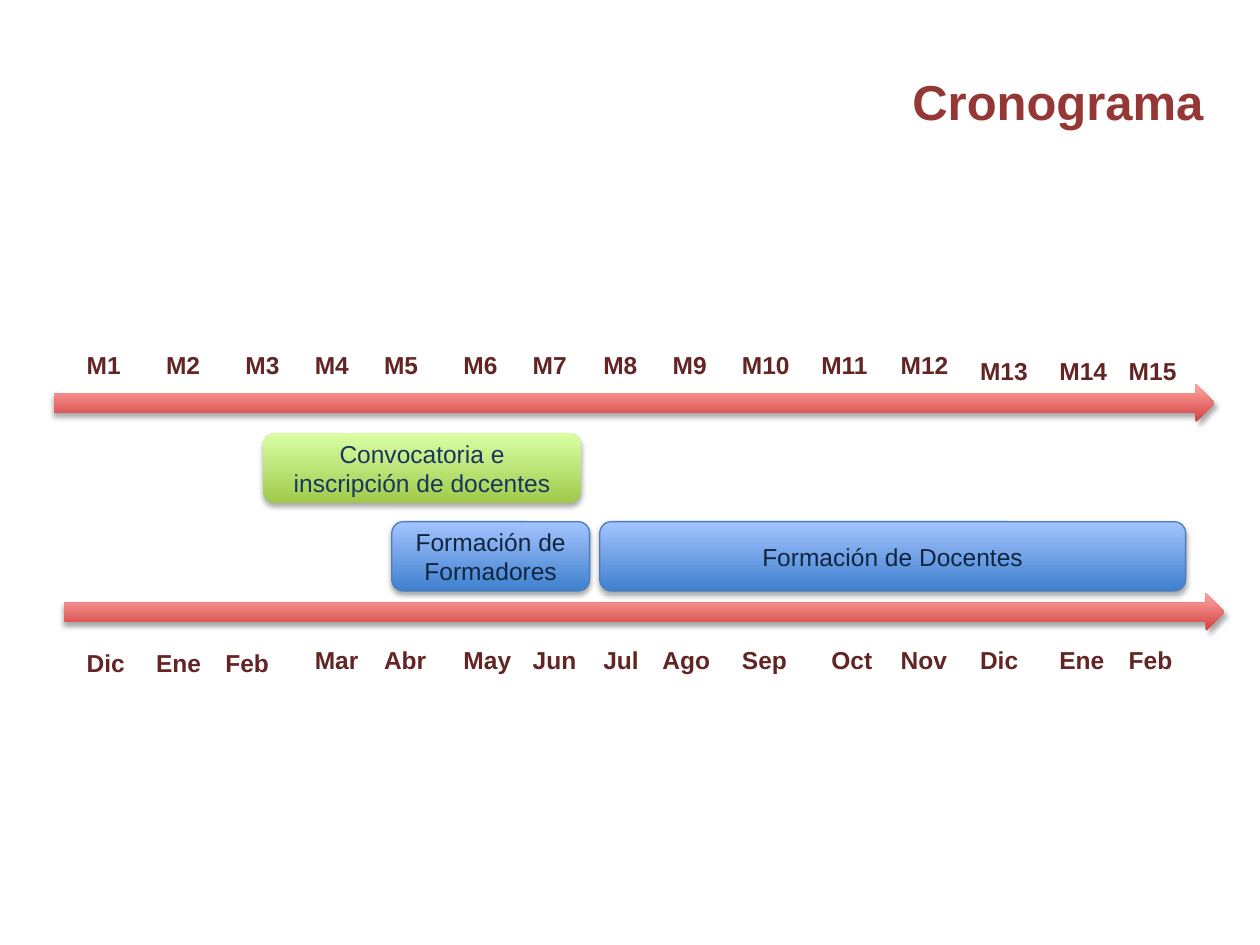
"""Build a one-slide project timeline with months, phases and two arrows."""
from lxml.etree import SubElement
from pptx import Presentation
from pptx.dml.color import RGBColor
from pptx.enum.shapes import MSO_SHAPE as Shape
from pptx.enum.text import MSO_ANCHOR as Anchor, MSO_AUTO_SIZE as AutoSize, PP_ALIGN as Align
from pptx.oxml.ns import qn
from pptx.util import Inches, Pt

COLORS = {
    "title": "953735", "label": "632523", "shadow": "000000",
    "red_dark": "D1403C", "red_light": "FFA6A5",
    "green_dark": "A0CA4A", "green_light": "DAFFA5", "green_text": "17375E",
    "blue_dark": "3F80CE", "blue_light": "A4C4FF", "blue_line": "4B7EBC", "blue_text": "10253F",
}
PROJECT_MONTHS = [
    (2.73, [0.59, 1.22, 1.85, 2.4, 2.95, 3.58, 4.13, 4.69, 5.24, 5.79, 6.42, 7.05]),
    (2.78, [7.68, 8.31, 8.86]),
]
CALENDAR_MONTHS = [
    (5.09, [("Dic", 0.59), ("Ene", 1.14), ("Feb", 1.69)]),
    (5.07, [("Mar", 2.4), ("Abr", 2.95), ("May", 3.58), ("Jun", 4.13),
            ("Jul", 4.69), ("Ago", 5.16), ("Sep", 5.79), ("Oct", 6.5),
            ("Nov", 7.05), ("Dic", 7.68), ("Ene", 8.31), ("Feb", 8.86)]),
]
PHASES = [
    ("Convocatoria e inscripción de docentes", 2.09, 3.44, 2.52, "green"),
    ("Formación de Formadores", 3.11, 4.14, 1.57, "blue"),
    ("Formación de Docentes", 4.76, 4.14, 4.65, "blue"),
]
ARROWS = [(0.43, 3.05), (0.51, 4.71)]


def color(name):
    return RGBColor.from_string(COLORS[name])


def write(frame, text, size, tint, bold=False, align=Align.LEFT):
    frame.word_wrap = True
    frame.text = text
    para = frame.paragraphs[0]
    para.alignment = align
    font = para.runs[0].font
    font.name, font.size, font.bold = "Arial", Pt(size), bold
    font.color.rgb = color(tint)


def add_title(page, text):
    title = page.shapes.title
    title.left, title.top = Inches(5.63), Inches(0.52)
    title.width, title.height = Inches(4.02), Inches(0.57)
    frame = title.text_frame
    frame.auto_size = AutoSize.NONE
    frame.vertical_anchor = Anchor.TOP
    write(frame, text, 28, "title", True, Align.RIGHT)


def add_label(page, text, left, top):
    box = page.shapes.add_textbox(Inches(left), Inches(top), Inches(0.94), Inches(0.34))
    write(box.text_frame, text, 14, "label", True)


def add_soft_shadow(shape):
    shape.shadow.inherit = False
    effects = shape._element.spPr.find(qn("a:effectLst"))
    shadow = SubElement(effects, qn("a:outerShdw"), blurRad=str(Pt(3.1)),
                        dist=str(Pt(1.8)), dir="5400000", rotWithShape="0")
    tint = SubElement(shadow, qn("a:srgbClr"), val=COLORS["shadow"])
    SubElement(tint, qn("a:alpha"), val="35000")


def add_gradient_shape(page, kind, left, top, width, height, hue):
    shape = page.shapes.add_shape(kind, Inches(left), Inches(top), Inches(width), Inches(height))
    shape.fill.gradient()
    shape.fill.gradient_angle = 90
    for stop, shade in zip(shape.fill.gradient_stops, ("dark", "light")):
        stop.color.rgb = color(f"{hue}_{shade}")
    if f"{hue}_line" in COLORS:
        shape.line.color.rgb = color(f"{hue}_line")
        shape.line.width = Pt(0.75)
    else:
        shape.line.fill.background()
    add_soft_shadow(shape)
    return shape


def add_phase(page, text, left, top, width, hue):
    phase = add_gradient_shape(page, Shape.ROUNDED_RECTANGLE, left, top, width, 0.55, hue)
    phase.text_frame.vertical_anchor = Anchor.MIDDLE
    write(phase.text_frame, text, 14, f"{hue}_text", align=Align.CENTER)


def main():
    deck = Presentation()
    deck.slide_width, deck.slide_height = Inches(10), Inches(7.5)
    page = deck.slides.add_slide(deck.slide_layouts[5])
    add_title(page, "Cronograma")
    number = 0
    for top, lefts in PROJECT_MONTHS:
        for left in lefts:
            number += 1
            add_label(page, f"M{number}", left, top)
    for left, top in ARROWS:
        add_gradient_shape(page, Shape.RIGHT_ARROW, left, top, 9.21, 0.3, "red")
    for phase in PHASES:
        add_phase(page, *phase)
    for top, months in CALENDAR_MONTHS:
        for month, left in months:
            add_label(page, month, left, top)
    deck.save("out.pptx")


if __name__ == "__main__":
    main()
